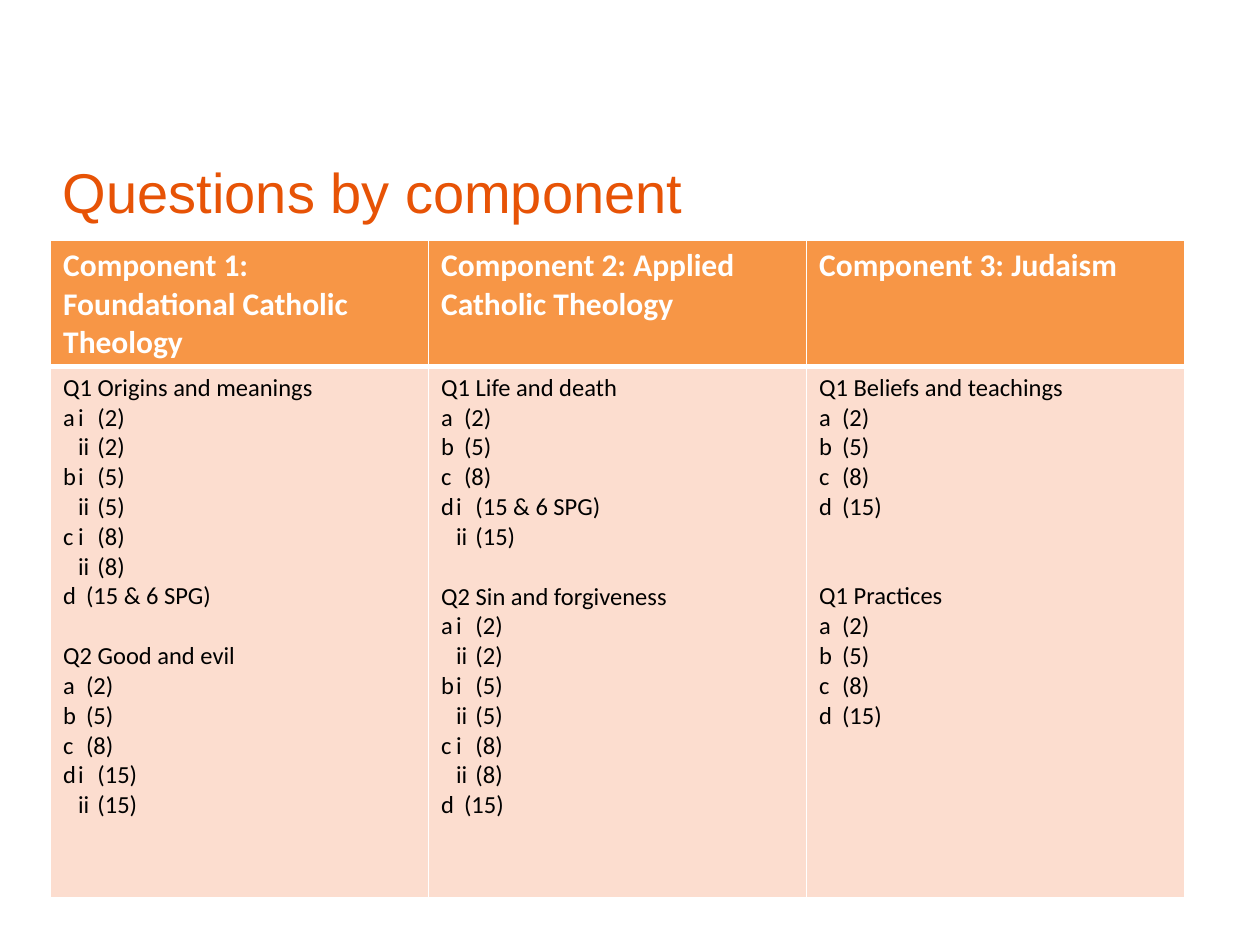
from lxml import etree
from pptx import Presentation
from pptx.dml.color import RGBColor
from pptx.oxml.ns import qn
from pptx.util import Cm, Pt

TITLE = "Questions by component"

# Each part is (letter, roman, marks); a part with no roman is one question
SPLIT = [("a", "i", "(2)"), ("", "ii", "(2)"),
         ("b", "i", "(5)"), ("", "ii", "(5)"),
         ("c", "i", "(8)"), ("", "ii", "(8)")]
SHORT = [("a", "", "(2)"), ("b", "", "(5)"), ("c", "", "(8)")]
LAST = ("d", "", "(15)")
ESSAY = ("", "ii", "(15)")

# Heading, then (question, parts), then the lines left open between questions
PAPERS = [
    ("Component 1: Foundational Catholic Theology",
     [("Q1 Origins and meanings", SPLIT + [("d", "", "(15 & 6 SPG)")]),
      ("Q2 Good and evil", SHORT + [("d", "i", "(15)"), ESSAY])], 1),
    ("Component 2: Applied Catholic Theology",
     [("Q1 Life and death", SHORT + [("d", "i", "(15 & 6 SPG)"), ESSAY]),
      ("Q2 Sin and forgiveness", SPLIT + [LAST])], 1),
    ("Component 3: Judaism",
     [("Q1 Beliefs and teachings", SHORT + [LAST]),
      ("Q1 Practices", SHORT + [LAST])], 2),
]

THEME = {
    "title": ("Arial", 32, "E75306", False),
    "head": ("Calibri", 18, "FFFFFF", True),
    "body": ("Calibri", 14, "000000", False),
    "head_fill": "F79646", "body_fill": "FCDDCF", "rule": "FFFFFF",
}
LINE = 17.05             # height of one body line, points
SPLIT_STOPS = (0.3, 0.69)  # roman, marks (cm)
SHORT_STOPS = (0.46,)      # marks (cm)
LEFT, TOP, WIDTH = 1.02, 4.85, 22.86
ROWS = (2.54, 10.7)


def add_run(para, text, style):
    face, size, color, bold = THEME[style]
    run = para.add_run()
    run.text = text
    run.font.name, run.font.size, run.font.bold = face, Pt(size), bold
    run.font.color.rgb = RGBColor.from_string(color)


def set_tabs(para, stops):
    tabs = etree.SubElement(para._p.get_or_add_pPr(), qn("a:tabLst"))
    for stop in stops:
        etree.SubElement(tabs, qn("a:tab"), pos=str(Cm(stop)), algn="l")


def paint(cell, fill, top, bottom):
    cell.fill.solid()
    cell.fill.fore_color.rgb = RGBColor.from_string(THEME[fill])
    props = cell._tc.get_or_add_tcPr()
    sides = (("L", 1), ("R", 1), ("T", top), ("B", bottom))
    for spot, (side, width) in enumerate(sides):
        edge = etree.Element(qn("a:ln" + side), w=str(Pt(width)))
        solid = etree.SubElement(edge, qn("a:solidFill"))
        etree.SubElement(solid, qn("a:srgbClr"), val=THEME["rule"])
        props.insert(spot, edge)


def fill_body(cell, questions, gap):
    frame = cell.text_frame
    for index, (name, parts) in enumerate(questions):
        para = frame.add_paragraph() if index else frame.paragraphs[0]
        if index:
            para.space_before = Pt(round(gap * LINE, 1))
        add_run(para, name, "body")
        for letter, roman, marks in parts:
            para = frame.add_paragraph()
            set_tabs(para, SPLIT_STOPS if roman else SHORT_STOPS)
            bits = (letter, roman, marks) if roman else (letter, marks)
            add_run(para, "\t".join(bits), "body")


def main():
    deck = Presentation()
    deck.slide_width, deck.slide_height = Cm(25.4), Cm(19.05)
    slide = deck.slides.add_slide(deck.slide_layouts[6])

    # Title
    box = slide.shapes.add_textbox(Cm(LEFT), Cm(3.05), Cm(23.39), Cm(1.7))
    box.text_frame.word_wrap = True
    add_run(box.text_frame.paragraphs[0], TITLE, "title")

    # Table with one column for each component
    table = slide.shapes.add_table(
        len(ROWS), len(PAPERS), Cm(LEFT), Cm(TOP), Cm(WIDTH), Cm(sum(ROWS))).table
    for row, height in zip(table.rows, ROWS):
        row.height = Cm(height)
    for col, (heading, questions, gap) in enumerate(PAPERS):
        table.columns[col].width = Cm(WIDTH / len(PAPERS))
        head, body = table.cell(0, col), table.cell(1, col)
        paint(head, "head_fill", 1, 3)
        paint(body, "body_fill", 3, 1)
        add_run(head.text_frame.paragraphs[0], heading, "head")
        fill_body(body, questions, gap)

    deck.save("out.pptx")


if __name__ == "__main__":
    main()
